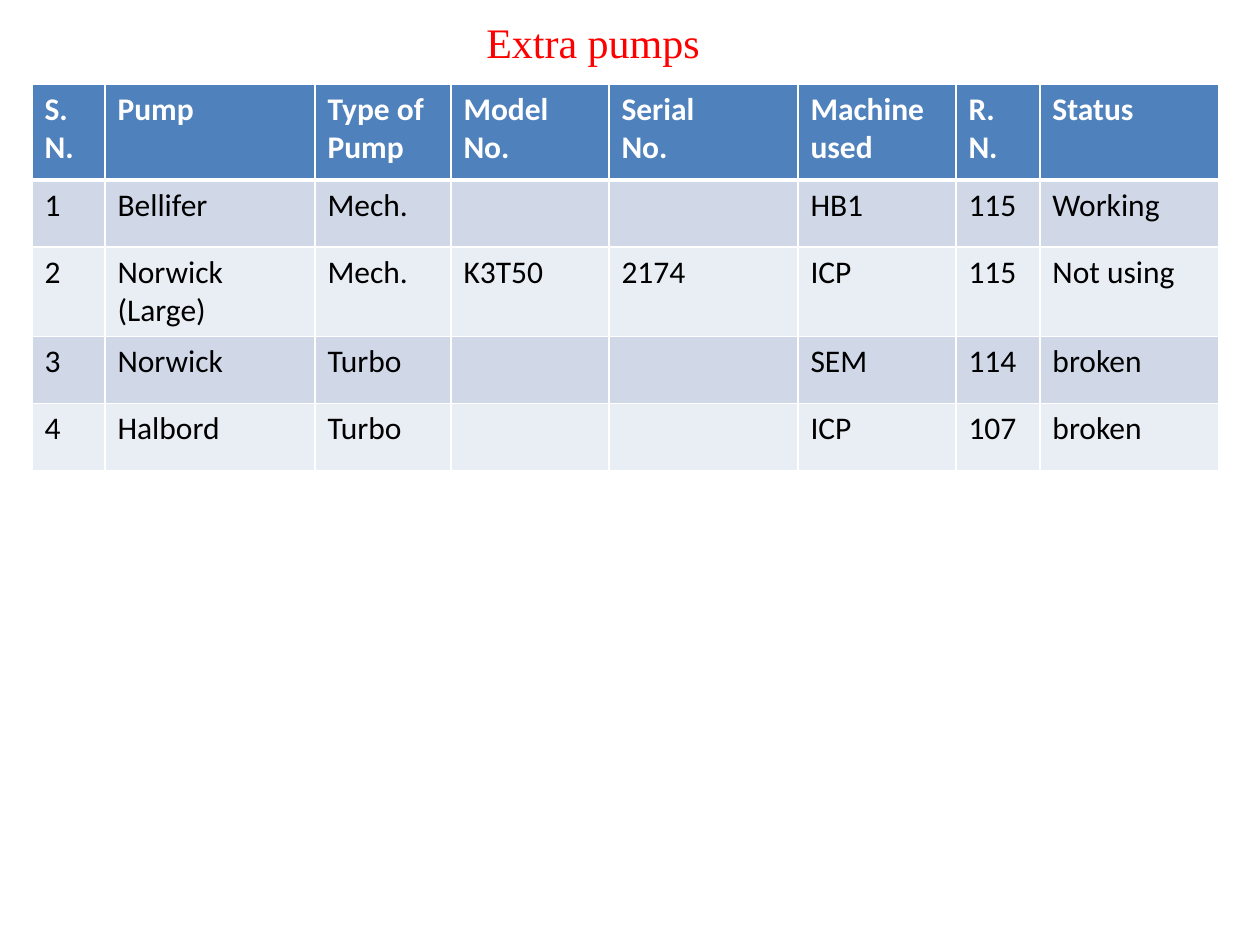
"""Build the slide listing the extra pumps."""
from dataclasses import dataclass

import pptx
import pptx.dml.color
import pptx.enum.text
import pptx.oxml
import pptx.oxml.ns
import pptx.util

SCALE = 914400 / 126
COLORS = {
    "title": "FF0000",
    "header": "4F81BD",
    "odd": "D0D8E8",
    "even": "E9EDF4",
    "white": "FFFFFF",
    "black": "000000",
}


@dataclass
class Column:
    heading: str
    width: int


@dataclass
class RowStyle:
    fill: str
    text: str
    bold: bool
    top: int
    bottom: int


COLUMNS = [
    Column("S.\nN.", 73),
    Column("Pump", 210),
    Column("Type of\nPump", 136),
    Column("Model\nNo.", 158),
    Column("Serial\nNo.", 189),
    Column("Machine used", 158),
    Column("R. N.", 84),
    Column("Status", 179),
]
PUMPS = [
    ("1", "Bellifer", "Mech.", "", "", "HB1", "115", "Working"),
    ("2", "Norwick\n(Large)", "Mech.", "K3T50", "2174", "ICP", "115", "Not using"),
    ("3", "Norwick", "Turbo", "", "", "SEM", "114", "broken"),
    ("4", "Halbord", "Turbo", "", "", "ICP", "107", "broken"),
]
HEADER_HEIGHT, ROW_HEIGHT = 96, 67


def px(n: int) -> int:
    return pptx.util.Emu(round(n * SCALE))


def rgb(name: str) -> pptx.dml.color.RGBColor:
    return pptx.dml.color.RGBColor.from_string(COLORS[name])


def format_runs(tf, font: str, size: int, color: str, bold: bool = False) -> None:
    for p in tf.paragraphs:
        for r in p.runs:
            r.font.name = font
            r.font.size = pptx.util.Pt(size)
            r.font.bold = bold
            r.font.color.rgb = rgb(color)


def add_border(cell, side: str, points: int) -> None:
    cell._tc.get_or_add_tcPr().append(pptx.oxml.parse_xml(
        f'<a:ln{side} {pptx.oxml.ns.nsdecls("a")} w="{pptx.util.Pt(points)}">'
        f'<a:solidFill><a:srgbClr val="{COLORS["white"]}"/></a:solidFill></a:ln{side}>'
    ))


def fill_cell(cell, text: str, style: RowStyle) -> None:
    cell.text_frame.text = text
    format_runs(cell.text_frame, "Calibri", 18, style.text, style.bold)
    for side, points in (("L", 1), ("R", 1), ("T", style.top), ("B", style.bottom)):
        add_border(cell, side, points)
    cell.fill.solid()
    cell.fill.fore_color.rgb = rgb(style.fill)


def row_style(i: int) -> RowStyle:
    if i == 0:
        return RowStyle("header", "white", True, 1, 3)
    return RowStyle("odd" if i % 2 else "even", "black", False, 3 if i == 1 else 1, 1)


def add_pump_table(s, left: int, top: int) -> None:
    rows = [tuple(c.heading for c in COLUMNS), *PUMPS]
    width = sum(c.width for c in COLUMNS)
    height = HEADER_HEIGHT + ROW_HEIGHT * len(PUMPS)
    table = s.shapes.add_table(
        len(rows), len(COLUMNS), px(left), px(top), px(width), px(height)
    ).table
    for col, column in zip(table.columns, COLUMNS):
        col.width = px(column.width)
    for i, texts in enumerate(rows):
        table.rows[i].height = px(ROW_HEIGHT if i else HEADER_HEIGHT)
        for j, text in enumerate(texts):
            fill_cell(table.cell(i, j), text, row_style(i))


def add_title(s, text: str, left: int, top: int, width: int, height: int) -> None:
    sp = s.shapes.add_textbox(px(left), px(top), px(width), px(height))
    tf = sp.text_frame
    tf.text = text
    tf.word_wrap = False
    tf.auto_size = pptx.enum.text.MSO_AUTO_SIZE.SHAPE_TO_FIT_TEXT
    format_runs(tf, "Times New Roman", 24, "title")


def main() -> None:
    prs = pptx.Presentation()
    prs.slide_width, prs.slide_height = px(1260), px(945)
    s = prs.slides.add_slide(prs.slide_layouts[6])
    add_pump_table(s, 32, 84)
    add_title(s, "Extra pumps", 474, 10, 241, 63)
    prs.save("out.pptx")


if __name__ == "__main__":
    main()
